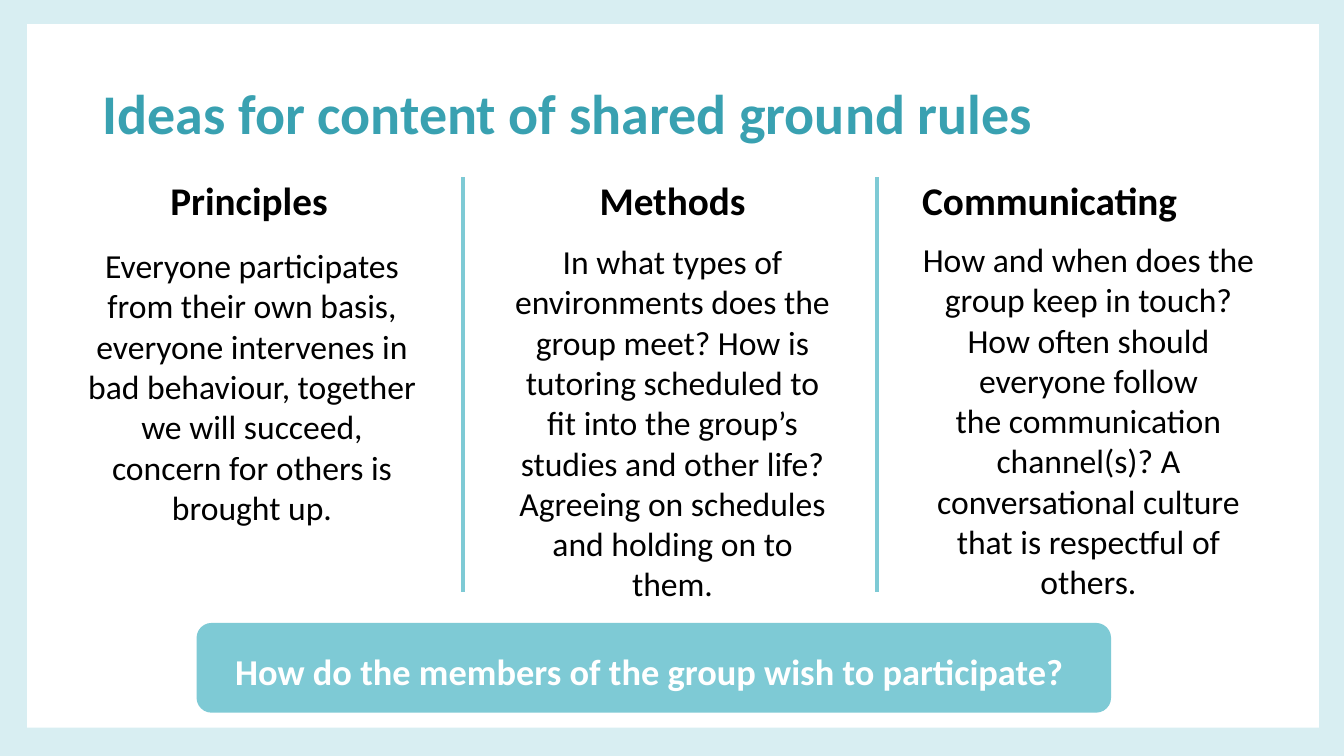
from dataclasses import dataclass

from lxml import etree
from pptx import Presentation
from pptx import util as u
from pptx.dml.color import RGBColor
from pptx.enum import shapes, text
from pptx.oxml.ns import qn

Inches, Pt = u.Inches, u.Pt


@dataclass(frozen=True)
class Theme:
    font: str = "Calibri"
    teal: str = "7ECAD5"
    dark_teal: str = "39A1B1"
    black: str = "000000"
    white: str = "FFFFFF"
    title_size: int = 40
    heading_size: int = 28
    body_size: int = 24
    question_size: int = 26
    border_opacity: int = 30
    divider_width: int = 3


THEME = Theme()
HEADING_TOP, HEADING_WIDTH, HEADING_HEIGHT = 1.79, 3.08, 0.49
DIVIDER_TOP, DIVIDER_BOTTOM = 1.76, 5.87

# Heading, heading left, body box (left, top, width, height), body text
COLUMNS = [
    ("Principles", 0.93, (0.77, 2.38, 3.46, 2.93),
     "Everyone participates from their own basis, everyone intervenes in "
     "bad behaviour, together we will succeed, concern for others is "
     "brought up."),
    ("Methods", 5.13, (4.96, 2.34, 3.42, 3.74),
     "In what types of environments does the group meet? How is tutoring "
     "scheduled to fit into the group’s studies and other life? Agreeing on "
     "schedules and holding on to them."),
    ("Communicating", 8.87, (9.02, 2.32, 3.55, 3.74),
     "How and when does the group keep in touch? How often should everyone "
     "follow\nthe communication channel(s)? A conversational culture that is "
     "respectful of others."),
]
DIVIDERS = [4.59, 8.7]


def add_panel(slide, kind, box, color, opacity=100):
    shape = slide.shapes.add_shape(kind, *map(Inches, box))
    shape.shadow.inherit = False
    shape.line.fill.background()
    shape.fill.solid()
    shape.fill.fore_color.rgb = RGBColor.from_string(color)
    if opacity < 100:
        color_element = shape.fill._xPr.find(".//" + qn("a:srgbClr"))
        etree.SubElement(color_element, qn("a:alpha"), val=str(opacity * 1000))


def add_text(slide, box, content, size, color, bold=False, centered=True):
    frame = slide.shapes.add_textbox(*map(Inches, box)).text_frame
    frame.word_wrap = True
    paragraph = frame.paragraphs[0]
    paragraph.text = content
    if centered:
        paragraph.alignment = text.PP_ALIGN.CENTER
    font = paragraph.font
    font.name, font.size, font.bold = THEME.font, Pt(size), bold
    font.color.rgb = RGBColor.from_string(color)
    return frame


def add_title(slide, box, content):
    frame = add_text(slide, box, content, THEME.title_size, THEME.dark_teal,
                     bold=True, centered=False)
    frame.vertical_anchor = text.MSO_ANCHOR.MIDDLE
    frame.paragraphs[0].line_spacing = 0.9


def add_column(slide, heading, heading_left, body_box, body):
    heading_box = (heading_left, HEADING_TOP, HEADING_WIDTH, HEADING_HEIGHT)
    frame = add_text(slide, heading_box, heading, THEME.heading_size,
                     THEME.black, bold=True)
    frame.paragraphs[0].line_spacing = 0.8
    frame.paragraphs[0].space_before = Pt(10)
    add_text(slide, body_box, body, THEME.body_size, THEME.black)


def add_divider(slide, left):
    line = slide.shapes.add_connector(
        shapes.MSO_CONNECTOR.STRAIGHT, Inches(left), Inches(DIVIDER_TOP),
        Inches(left), Inches(DIVIDER_BOTTOM))
    line.line.color.rgb = RGBColor.from_string(THEME.teal)
    line.line.width = Pt(THEME.divider_width)
    etree.SubElement(line._element.spPr, qn("a:effectLst"))


def main():
    presentation = Presentation()
    presentation.slide_width = Inches(13.33)
    presentation.slide_height = Inches(7.5)
    slide = presentation.slides.add_slide(presentation.slide_layouts[6])
    rectangle = shapes.MSO_SHAPE.RECTANGLE

    # Pale border around a white page
    add_panel(slide, rectangle, (0, 0, 13.33, 7.5), THEME.teal,
              THEME.border_opacity)
    add_panel(slide, rectangle, (0.27, 0.24, 12.81, 6.98), THEME.white)

    # Title and three columns
    add_title(slide, (0.92, 0.63, 11.5, 1.05),
              "Ideas for content of shared ground rules")
    for column in COLUMNS:
        add_column(slide, *column)
    for left in DIVIDERS:
        add_divider(slide, left)

    # Closing question
    add_panel(slide, shapes.MSO_SHAPE.ROUNDED_RECTANGLE,
              (1.95, 6.18, 9.07, 0.89), THEME.teal)
    add_text(slide, (1.99, 6.39, 8.91, 0.54),
             "How do the members of the group wish to participate?",
             THEME.question_size, THEME.white, bold=True)

    presentation.save("out.pptx")


if __name__ == "__main__":
    main()
